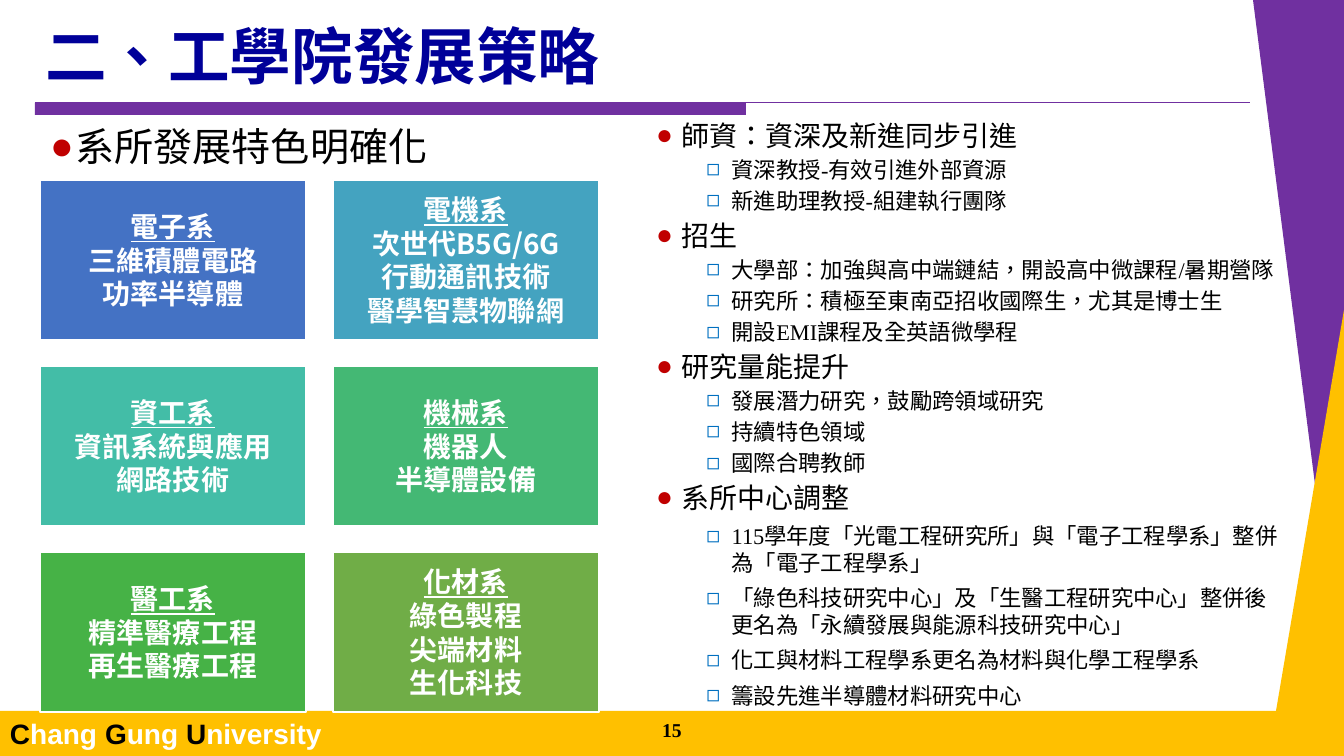
import dataclasses

import lxml.etree
import pptx
import pptx.dml.color
import pptx.enum.lang
import pptx.enum.shapes
import pptx.enum.text
import pptx.oxml.ns
import pptx.util

ALIGN = pptx.enum.text.PP_ALIGN
ANCHOR = pptx.enum.text.MSO_ANCHOR


@dataclasses.dataclass(frozen=True)
class Theme:
    """Colours, fonts and type sizes of the slide."""
    purple: str = "7030A0"
    gold: str = "FFC000"
    navy: str = "000099"
    black: str = "000000"
    white: str = "FFFFFF"
    red: str = "C00000"
    blue: str = "0070C0"
    cards: tuple = ("4472C4", "44A3C0", "43BDA7", "44B874", "46B246", "70AD47")
    sans: str = "Calibri"
    serif: str = "Times New Roman"
    footer: str = "Arial"
    cjk: str = "Noto Sans CJK SC"
    title: int = 44
    lead: int = 28
    body: int = 20
    detail: int = 16
    number: int = 14


def rgb(value):
    """Turn a hex string into a colour."""
    return pptx.dml.color.RGBColor.from_string(value)


def add_text(tf, text, font, size, color, bold=False, underline=None, align=ALIGN.LEFT,
             level=0, bullet=None, after=0, spacing=1.0, first=False):
    """Add a paragraph; text is a string or (string, overrides) pairs."""
    p = tf.paragraphs[0] if first else tf.add_paragraph()
    p.alignment, p.level = align, level
    p.space_before, p.space_after = pptx.util.Pt(0), pptx.util.Pt(after)
    p.line_spacing = spacing
    if bullet:
        char, bullet_color = bullet
        pPr = p._p.get_or_add_pPr()
        pPr.set("marL", str(pptx.util.Inches(0.25 + 0.5 * level)))
        pPr.set("indent", str(pptx.util.Inches(-0.25)))
        qn = pptx.oxml.ns.qn
        clr = lxml.etree.SubElement(pPr, qn("a:buClr"))
        lxml.etree.SubElement(clr, qn("a:srgbClr"), val=bullet_color)
        lxml.etree.SubElement(pPr, qn("a:buFont"), typeface="Arial")
        lxml.etree.SubElement(pPr, qn("a:buChar"), char=char)
    for words, change in [(text, {})] if isinstance(text, str) else text:
        r = p.add_run()
        r.text = words
        r.font.name = change.get("font", font)
        r.font.size = pptx.util.Pt(size)
        r.font.bold, r.font.underline = bold, underline
        r.font.color.rgb = rgb(change.get("color", color))
        r.font.language_id = pptx.enum.lang.MSO_LANGUAGE_ID.TRADITIONAL_CHINESE


class Deck:
    """Holds the theme and the current slide."""

    def __init__(self, theme):
        """Start a widescreen presentation with one slide."""
        self.theme = theme
        self.prs = pptx.Presentation()
        self.prs.slide_width, self.prs.slide_height = self.px(1344), self.px(756)
        self.s = self.prs.slides.add_slide(self.prs.slide_layouts[3])

    def px(self, n):
        """Turn px into EMU."""
        return pptx.util.Emu(round(n * 914400 / 100.8))

    def paint(self, sp, fill, line=None):
        """Set fill and line and drop the shadow."""
        sp.shadow.inherit = False
        sp.fill.solid()
        sp.fill.fore_color.rgb = rgb(fill)
        if line:
            sp.line.color.rgb = rgb(line)
            sp.line.width = pptx.util.Pt(1)
        else:
            sp.line.fill.background()

    def frame(self, sp, anchor=ANCHOR.TOP, inset=None):
        """Prepare the text frame of a shape."""
        tf = sp.text_frame
        tf.word_wrap = True
        tf.auto_size = pptx.enum.text.MSO_AUTO_SIZE.NONE
        tf.vertical_anchor = anchor
        if inset is not None:
            tf.margin_left = tf.margin_right = self.px(inset)
            tf.margin_top = tf.margin_bottom = self.px(inset)
        return tf

    def rect(self, x, y, w, h, fill, line=None, inset=None):
        """Draw a rectangle and return its text frame."""
        sp = self.s.shapes.add_shape(pptx.enum.shapes.MSO_SHAPE.RECTANGLE,
                                     *map(self.px, (x, y, w, h)))
        self.paint(sp, fill, line)
        return self.frame(sp, ANCHOR.MIDDLE, inset)

    def polygon(self, points, fill):
        """Draw a closed outline."""
        fb = self.s.shapes.build_freeform(*points[0], scale=914400 / 100.8)
        fb.add_line_segments(points[1:], close=True)
        self.paint(fb.convert_to_shape(), fill)

    def rule(self, x1, y1, x2, y2, color, width):
        """Draw a straight line."""
        cn = self.s.shapes.add_connector(pptx.enum.shapes.MSO_CONNECTOR.STRAIGHT,
                                         *map(self.px, (x1, y1, x2, y2)))
        cn.line.color.rgb = rgb(color)
        cn.line.width = pptx.util.Pt(width)
        lxml.etree.SubElement(cn._element.spPr, pptx.oxml.ns.qn("a:effectLst"))

    def textbox(self, x, y, w, h):
        """Add a text box and return its text frame."""
        return self.frame(self.s.shapes.add_textbox(*map(self.px, (x, y, w, h))))

    def placeholder(self, idx, x, y, w, h, anchor=ANCHOR.TOP):
        """Move a template placeholder and return its text frame."""
        sp = self.s.placeholders[idx]
        sp.left, sp.top, sp.width, sp.height = map(self.px, (x, y, w, h))
        return self.frame(sp, anchor)


CARDS = [
    ["電子系", "三維積體電路", "功率半導體"],
    ["電機系", [("次世代", {}), ("B5G/6G", {"font": Theme.cjk})], "行動通訊技術", "醫學智慧物聯網"],
    ["資工系", "資訊系統與應用", "網路技術"],
    ["機械系", "機器人", "半導體設備"],
    ["醫工系", "精準醫療工程", "再生醫療工程"],
    ["化材系", "綠色製程", "尖端材料", "生化科技"],
]

STRATEGIES = [
    ("師資：資深及新進同步引進", 3, ["資深教授-有效引進外部資源", "新進助理教授-組建執行團隊"]),
    ("招生", 3, ["大學部：加強與高中端鏈結，開設高中微課程/暑期營隊",
               "研究所：積極至東南亞招收國際生，尤其是博士生", "開設EMI課程及全英語微學程"]),
    ("研究量能提升", 3, ["發展潛力研究，鼓勵跨領域研究", "持續特色領域", "國際合聘教師"]),
    ("系所中心調整", 6, ["115學年度「光電工程研究所」與「電子工程學系」整併為「電子工程學系」",
                   "「綠色科技研究中心」及「生醫工程研究中心」整併後更名為「永續發展與能源科技研究中心」",
                   "化工與材料工程學系更名為材料與化學工程學系", "籌設先進半導體材料研究中心"]),
]


def main():
    """Build the strategy slide."""
    t = Theme()
    d = Deck(t)
    dot, square = ("●", t.red), ("◻", t.blue)

    tf = d.rect(0, 711, 1344, 45, t.gold)
    name = [part for word in ("Chang ", "Gung ", "University")
            for part in ((word[0], {"color": t.black}), (word[1:], {}))]
    add_text(tf, name, t.footer, t.body, t.white, bold=True, first=True)
    d.polygon([(1344, 711), (1253, 0), (1344, 0)], t.purple)
    d.polygon([(1344, 310), (1276, 711), (1344, 711)], t.gold)
    d.rect(35, 103, 711, 12, t.purple)
    d.rule(35, 103, 1250, 103, t.purple, 0.75)

    tf = d.placeholder(0, 35, 20, 1215, 80, ANCHOR.MIDDLE)
    add_text(tf, "二、工學院發展策略", t.sans, t.title, t.navy, bold=True, spacing=0.9, first=True)
    tf = d.placeholder(1, 40, 117, 603, 591)
    add_text(tf, "系所發展特色明確化", t.sans, t.lead, t.black, bullet=dot, after=4, first=True)

    tf = d.placeholder(2, 646, 113, 652, 591)
    for i, (heading, after, details) in enumerate(STRATEGIES):
        add_text(tf, heading, t.serif, t.body, t.black, bullet=dot, after=after, first=i == 0)
        for detail in details:
            add_text(tf, detail, t.serif, t.detail, t.black, level=1, bullet=square, after=after)

    tf = d.textbox(533, 713, 278, 28)
    add_text(tf, "15", t.serif, t.number, t.black, bold=True, align=ALIGN.CENTER, first=True)

    for i, (lines, fill) in enumerate(zip(CARDS, t.cards)):
        row, col = divmod(i, 2)
        tf = d.rect(40 + 293 * col, 180 + 186 * row, 266, 160, fill, t.white, inset=8)
        for j, line in enumerate(lines):
            add_text(tf, line, t.sans, t.body, t.white, bold=True, underline=j == 0,
                     align=ALIGN.CENTER, first=j == 0)

    d.prs.save("out.pptx")


if __name__ == "__main__":
    main()
